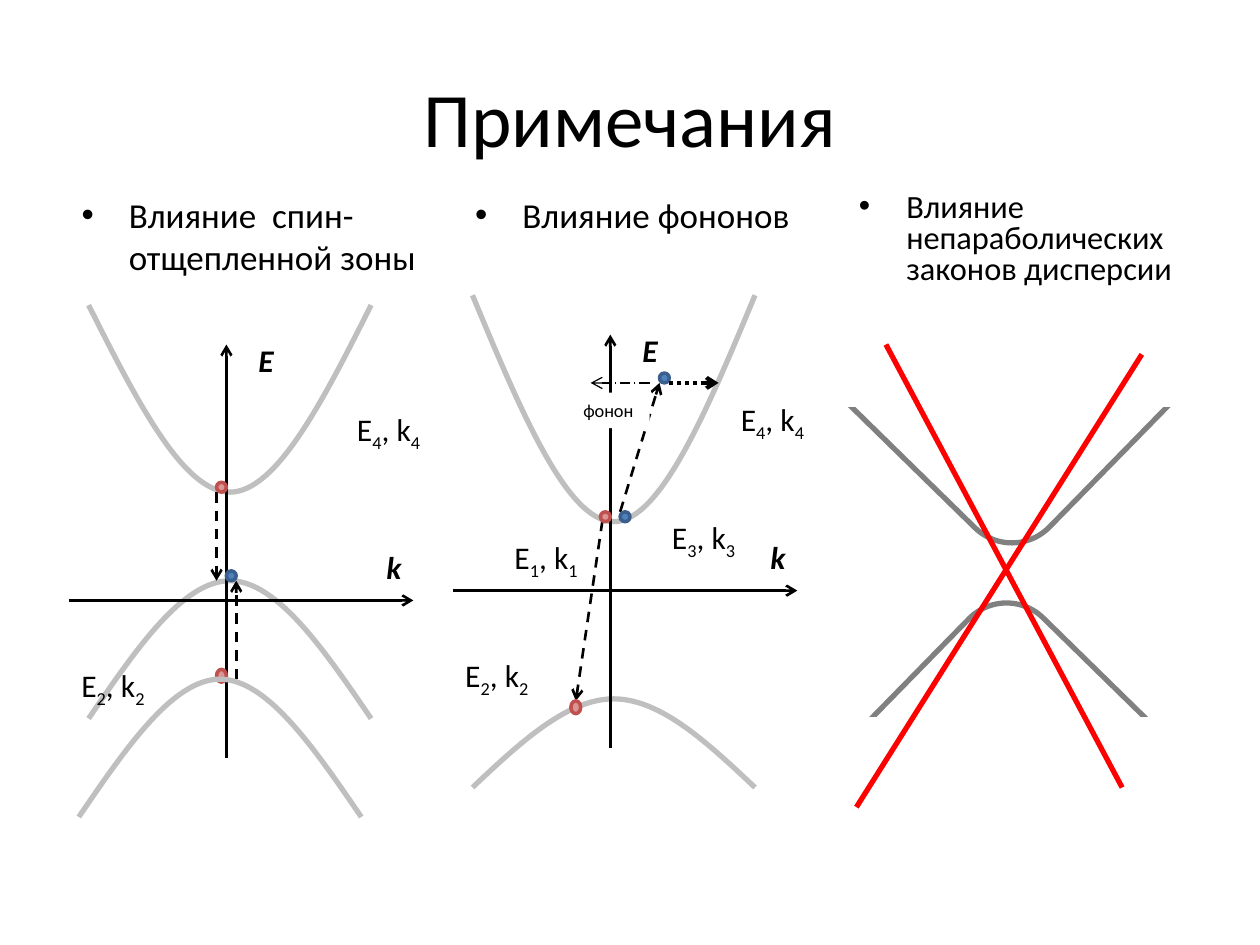
import pptx
import pptx.util
import pptx.dml.color
import pptx.enum.dml
import pptx.enum.shapes
import pptx.enum.text
from lxml import etree

# Every length is in grid units: the slide is 128 columns by 96 rows
COLS, ROWS = 128, 96
FONT = "Calibri"
C = {"ink": "000000", "paper": "FFFFFF", "band": "BFBFBF", "gap": "808080", "linear": "FF0000",
     "electron": "4F81BD", "electron_rim": "3A5F8C", "hole": "D99694", "hole_rim": "C0504D"}
DASH = pptx.enum.dml.MSO_LINE
SHAPE = pptx.enum.shapes.MSO_SHAPE
qn = pptx.oxml.ns.qn

TITLE = "Примечания"
NOTES = ["Влияние  спин-отщепленной зоны", "Влияние фононов",
         "Влияние  непараболических законов дисперсии"]
NOTE_LEFTS = [7, 47, 86]

# Bands: left, end row, vertex row. Dots: kind, left, top, height.
# Levels: index, left, top. Jumps: start and end of each dashed arrow.
PANELS = [
    {"origin": (23, 61),
     "bands": [(9, 31, 50), (9, 73, 59)],
     "front_bands": [(8, 83, 69)],
     "jumps": [(24, 69, 24, 59), (22, 50, 22, 59)],
     "dots": [("electron", 23, 58, 1), ("hole", 22, 49, 1), ("hole", 22, 68, 1.3)],
     "levels": [("4", 35, 41), ("2", 7, 67)]},
    {"origin": (62, 60),
     "bands": [(48, 30, 53), (48, 80, 71)],
     "front_bands": [],
     "jumps": [(63, 52, 67, 38.9), (61.2, 52.9, 58.5, 71.2)],
     "dots": [("electron", 63, 52, 1), ("electron", 67, 37.9, 1),
              ("hole", 61, 52, 1), ("hole", 58, 71.2, 1.3)],
     "levels": [("4", 74, 40), ("3", 67, 52), ("1", 51, 54), ("2", 46, 66)]},
]
BAND_WIDTH = 28.7
# Rounded corner, then the white cover that trims it
UPPER_GAP = [(86.4, 18.2, 33.5, 32), (82, 10.2, 46, 31)]
LOWER_GAP = [(83, 67.1, 36, 32), (78, 73, 50, 23)]
LINEAR_BANDS = [(90, 35, 114, 80), (116, 36, 87, 82)]

prs = pptx.Presentation()
prs.slide_width, prs.slide_height = pptx.util.Inches(10), pptx.util.Inches(7.5)
slide = prs.slides.add_slide(prs.slide_layouts[1])


def units(*values):
    return [round(v * prs.slide_width / COLS) for v in values]


def rgb(name):
    return pptx.dml.color.RGBColor.from_string(C[name])


def style_line(line, color, width, dash=None):
    line.color.rgb = rgb(color)
    line.width = pptx.util.Pt(width)
    if dash:
        line.dash_style = dash


def style_font(p, size, strong=False):
    p.font.name, p.font.size = FONT, pptx.util.Pt(size)
    p.font.color.rgb = rgb("ink")
    if strong:
        p.font.bold = p.font.italic = True


def add_line(ends, color="ink", width=1.5, dash=None, arrow=True):
    cn = slide.shapes.add_connector(pptx.enum.shapes.MSO_CONNECTOR.STRAIGHT, *units(*ends))
    style_line(cn.line, color, width, dash)
    if arrow:
        etree.SubElement(cn.line._get_or_add_ln(), qn("a:tailEnd"), type="arrow")
    etree.SubElement(cn._element.spPr, qn("a:effectLst"))


def add_shape(kind, box, fill, line, width):
    sp = slide.shapes.add_shape(kind, *units(*box))
    sp.shadow.inherit = False
    if fill:
        sp.fill.solid()
        sp.fill.fore_color.rgb = rgb(fill)
    else:
        sp.fill.background()
    style_line(sp.line, line, width)
    return sp


def add_band(left, end, vertex):
    """Two cubic arcs, mirrored about the vertex."""
    step, middle = BAND_WIDTH / 6, (end + vertex) / 2
    rows = [end, middle, vertex, vertex, vertex, middle, end]
    points = [tuple(units(left + i * step, row)) for i, row in enumerate(rows)]
    builder = slide.shapes.build_freeform(*points[0], scale=1.0)
    builder.add_line_segments([points[3], points[6]], close=False)
    sp = builder.convert_to_shape()
    # Turn each straight segment into a cubic curve
    for i, segment in enumerate(list(sp._element.iter(qn("a:lnTo")))):
        curve = etree.Element(qn("a:cubicBezTo"))
        for x, y in points[3 * i + 1:3 * i + 4]:
            etree.SubElement(curve, qn("a:pt"), x=str(x - sp.left), y=str(y - sp.top))
        segment.getparent().replace(segment, curve)
    sp.shadow.inherit = False
    sp.fill.background()
    style_line(sp.line, "band", 3)


def add_text(box, size, runs, strong=False, wrap=False):
    """Runs are (text, is_subscript) pairs."""
    sp = slide.shapes.add_textbox(*units(*box))
    sp.text_frame.word_wrap = wrap
    p = sp.text_frame.paragraphs[0]
    style_font(p, size, strong)
    for text, subscript in runs:
        r = p.add_run()
        r.text = text
        if subscript:
            r._r.get_or_add_rPr().set("baseline", "-25000")
    return sp


def add_bullet(p, size):
    style_font(p, size)
    p.space_before = pptx.util.Pt(size * 0.2)
    ppr = p._p.get_or_add_pPr()
    indent = pptx.util.Inches(0.375)
    ppr.set("marL", str(indent))
    ppr.set("indent", str(-indent))
    font_props = ppr.find(qn("a:defRPr"))
    font_props.addprevious(etree.Element(qn("a:buFont"), typeface="Arial"))
    font_props.addprevious(etree.Element(qn("a:buChar"), char="•"))


def add_gap_edge(corner, cover):
    add_shape(SHAPE.ROUNDED_RECTANGLE, corner, None, "gap", 3).rotation = 134.4
    add_shape(SHAPE.RECTANGLE, cover, "paper", "paper", 2)


def add_note(text, left, size):
    sp = add_text((left, 19, 39, 12), size, [(text, False)], wrap=True)
    add_bullet(sp.text_frame.paragraphs[0], size)
    return sp


def add_panel(panel):
    x, y = panel["origin"]
    for band in panel["bands"]:
        add_band(*band)
    add_line((x, y + 16, x, y - 26))
    add_line((x - 16, y, x + 19, y))
    add_text((x + 15, y - 6, 4.1, 5.1), 18, [("k", False)], strong=True)
    add_text((x + 2, y - 27, 4.1, 5.1), 18, [("E", False)], strong=True)
    for jump in panel["jumps"]:
        add_line(jump, dash=DASH.DASH)
    for kind, left, top, height in panel["dots"]:
        add_shape(SHAPE.OVAL, (left, top, 1, height), kind, kind + "_rim", 2)
    for band in panel["front_bands"]:
        add_band(*band)
    for n, left, top in panel["levels"]:
        add_text((left, top, 9.3, 5.1), 18, [("E", False), (n, True), (", k", False), (n, True)])


# Upper edge of the non-parabolic gap, behind the title
add_gap_edge(*UPPER_GAP)

# Title and first note in the template's placeholders
title, body = slide.shapes.title, slide.placeholders[1]
for ph, text, box in ((title, TITLE, (6.4, 3.84, 115.2, 16)),
                      (body, NOTES[0], (NOTE_LEFTS[0], 19, 39, 12))):
    ph.left, ph.top, ph.width, ph.height = units(*box)
    ph.text_frame.text = text
    slide.shapes._spTree.append(ph._element)
style_font(title.text_frame.paragraphs[0], 44)
title.text_frame.vertical_anchor = pptx.enum.text.MSO_ANCHOR.MIDDLE
add_bullet(body.text_frame.paragraphs[0], 20)

# Spin-split panel, remaining notes, phonon panel
add_panel(PANELS[0])
add_note(NOTES[1], NOTE_LEFTS[1], 20)
note = add_note(NOTES[2], NOTE_LEFTS[2], 18.5)
note.text_frame.paragraphs[0].line_spacing = 0.8
note.fill.solid()
note.fill.fore_color.rgb = rgb("paper")
add_panel(PANELS[1])

# Lower gap edge and the linear bands
add_gap_edge(*LOWER_GAP)
for ends in LINEAR_BANDS:
    add_line(ends, "linear", 3, arrow=False)

# Phonon arrows and their label
add_line((68, 38.9, 73, 38.9), width=2.25, dash=DASH.ROUND_DOT)
add_line((66, 38.9, 60, 38.9), width=0.75, dash=DASH.LONG_DASH_DOT)
phonon = add_text((58, 39.9, 8, 3.6), 10.5, [("фонон", False)], wrap=True)
phonon.fill.solid()
phonon.fill.fore_color.rgb = rgb("paper")

prs.save("out.pptx")
